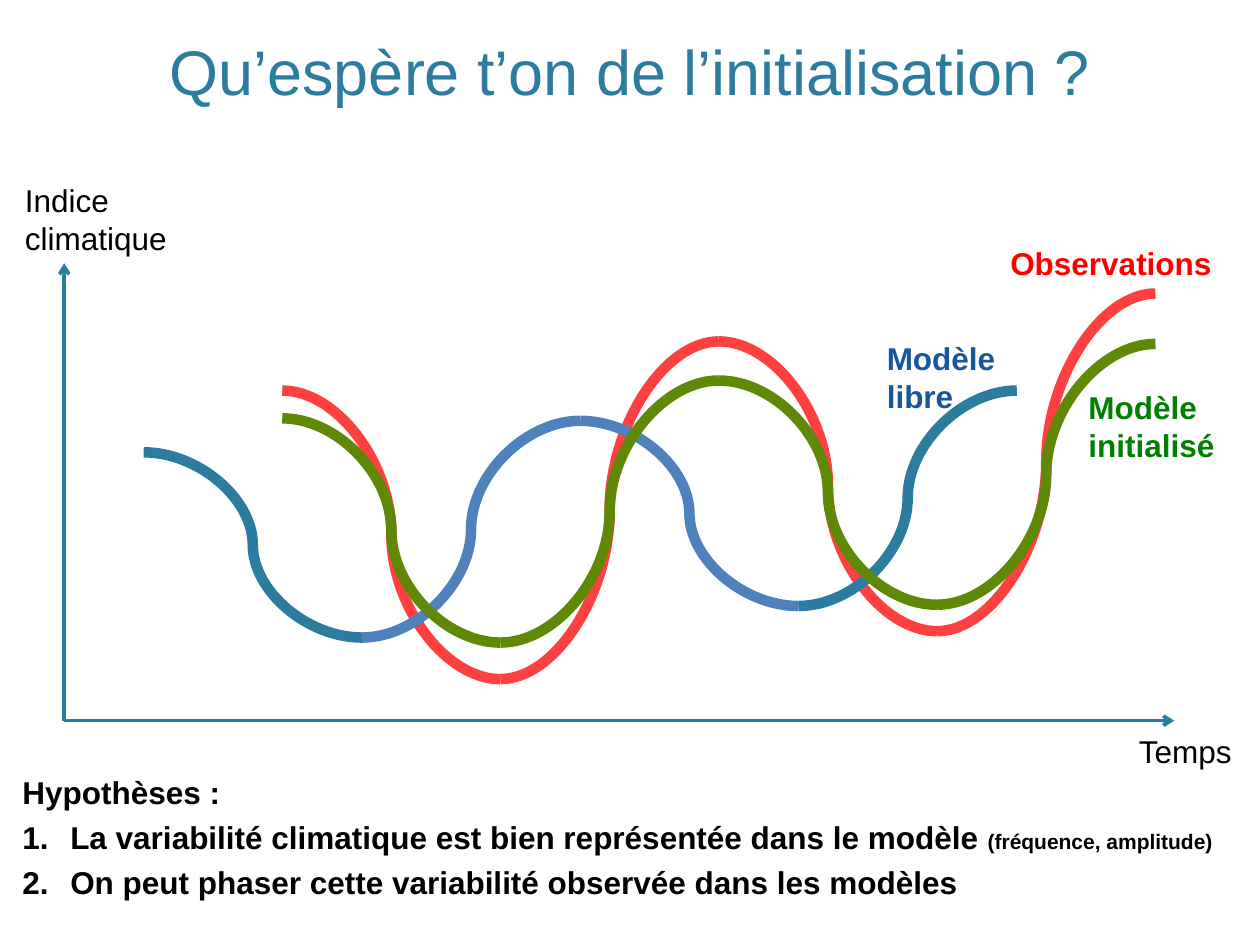
import pptx
import pptx.dml.color
import pptx.enum.shapes
import pptx.enum.text
import pptx.oxml
import pptx.oxml.ns
import pptx.util
from pptx.util import Inches

TEAL, RED, GREEN, BLUE = "2C7C9F", "FF4040", "5E8805", "4F81BD"
BLACK = "000000"
CONNECTOR = pptx.enum.shapes.MSO_CONNECTOR
ANCHOR = pptx.enum.text.MSO_ANCHOR
ALIGN = pptx.enum.text.PP_ALIGN


def color(hex_string):
    return pptx.dml.color.RGBColor.from_string(hex_string)


def add_xml(parent, tag, **attributes):
    element = pptx.oxml.parse_xml(f"<a:{tag} {pptx.oxml.ns.nsdecls('a')}/>")
    for name, value in attributes.items():
        element.set(name, value)
    parent.append(element)


class SlideBuilder:
    font = "Arial"
    text_size = 18
    axis_width = 2
    wave_width = 6

    def __init__(self, slide):
        self.slide = slide

    def style(self, span, hex_string, size=text_size, bold=False):
        span.font.name = self.font
        span.font.size = pptx.util.Pt(size)
        span.font.bold = bold
        span.font.color.rgb = color(hex_string)

    def text(self, place, lines, hex_string, size=text_size, bold=False, parent=None):
        """Add a text box with one paragraph for each line."""
        box = (parent or self.slide).shapes.add_textbox(*map(Inches, place))
        frame = box.text_frame
        frame.word_wrap = True
        frame.text = "\n".join(lines)
        for para in frame.paragraphs:
            for span in para.runs:
                self.style(span, hex_string, size, bold)
        return frame

    def connector(self, parent, kind, start, end, hex_string, width):
        line = parent.shapes.add_connector(kind, *map(Inches, (*start, *end)))
        line.line.color.rgb = color(hex_string)
        line.line.width = pptx.util.Pt(width)
        add_xml(line._element.spPr, "effectLst")
        return line

    def axis(self, start, end):
        line = self.connector(self.slide, CONNECTOR.STRAIGHT, start, end, TEAL, self.axis_width)
        outline = line._element.spPr.find(pptx.oxml.ns.qn("a:ln"))
        add_xml(outline, "tailEnd", type="arrow")

    def wave(self, left, right, heights, colors):
        """Chain curved connectors through evenly spaced turning points."""
        group = self.slide.shapes.add_group_shape()
        step = (right - left) / len(colors)
        points = [(left + i * step, y) for i, y in enumerate(heights)]
        for start, end, hex_string in zip(points, points[1:], colors):
            self.connector(group, CONNECTOR.CURVE, start, end, hex_string, self.wave_width)
        return group

    def number(self, para):
        properties = para._p.get_or_add_pPr()
        properties.set("marL", str(Inches(0.38)))
        properties.set("indent", str(Inches(-0.38)))
        add_xml(properties, "buFont", typeface="+mj-lt")
        add_xml(properties, "buAutoNum", type="arabicPeriod")


def main():
    deck = pptx.Presentation()
    deck.slide_width, deck.slide_height = Inches(10), Inches(7.5)
    page = SlideBuilder(deck.slides.add_slide(deck.slide_layouts[6]))

    # Title
    title = page.text((0, -0.11, 10, 1.02), ["Qu’espère t’on de l’initialisation ?"], TEAL, 36)
    title.vertical_anchor = ANCHOR.BOTTOM
    title.paragraphs[0].alignment = ALIGN.CENTER

    # Observed wave
    page.wave(2.24, 9.17, (3.1, 5.39, 2.71, 5.01, 2.33), [RED] * 4)

    # Axes and their labels
    origin = (0.51, 5.72)
    page.axis(origin, (0.51, 2.09))
    page.axis(origin, (9.32, 5.72))
    page.text((0.1, 1.39, 1.57, 0.71), ["Indice climatique"], BLACK)
    page.text((8.94, 5.76, 1.57, 0.4), ["Temps"], BLACK)
    page.text((7.92, 1.89, 1.96, 0.4), ["Observations"], "FF0000", bold=True)

    # Free model wave
    free = page.wave(1.14, 8.07, (3.59, 5.06, 3.34, 4.81, 3.1), [TEAL, BLUE, BLUE, TEAL])
    page.text((6.94, 2.64, 1.13, 0.71), ["Modèle libre"], "18579B", bold=True, parent=free)

    # Initialised model wave
    initialised = page.wave(2.24, 9.17, (3.32, 5.1, 3.02, 4.8, 2.73), [GREEN] * 4)
    page.text((8.54, 3.03, 1.57, 0.71), ["Modèle initialisé"], "008000", bold=True,
              parent=initialised)

    # Hypotheses
    hypotheses = page.text((0.08, 6.03, 10.04, 1.53), [
        "Hypothèses :",
        "La variabilité climatique est bien représentée dans le modèle ",
        "On peut phaser cette variabilité observée dans les modèles",
    ], BLACK, bold=True)
    for para in hypotheses.paragraphs:
        para.line_spacing = pptx.util.Pt(25.6)
    for para in hypotheses.paragraphs[1:]:
        page.number(para)
    detail = hypotheses.paragraphs[1].add_run()
    detail.text = "(fréquence, amplitude)"
    page.style(detail, BLACK, 12, True)

    deck.save("out.pptx")


if __name__ == "__main__":
    main()
